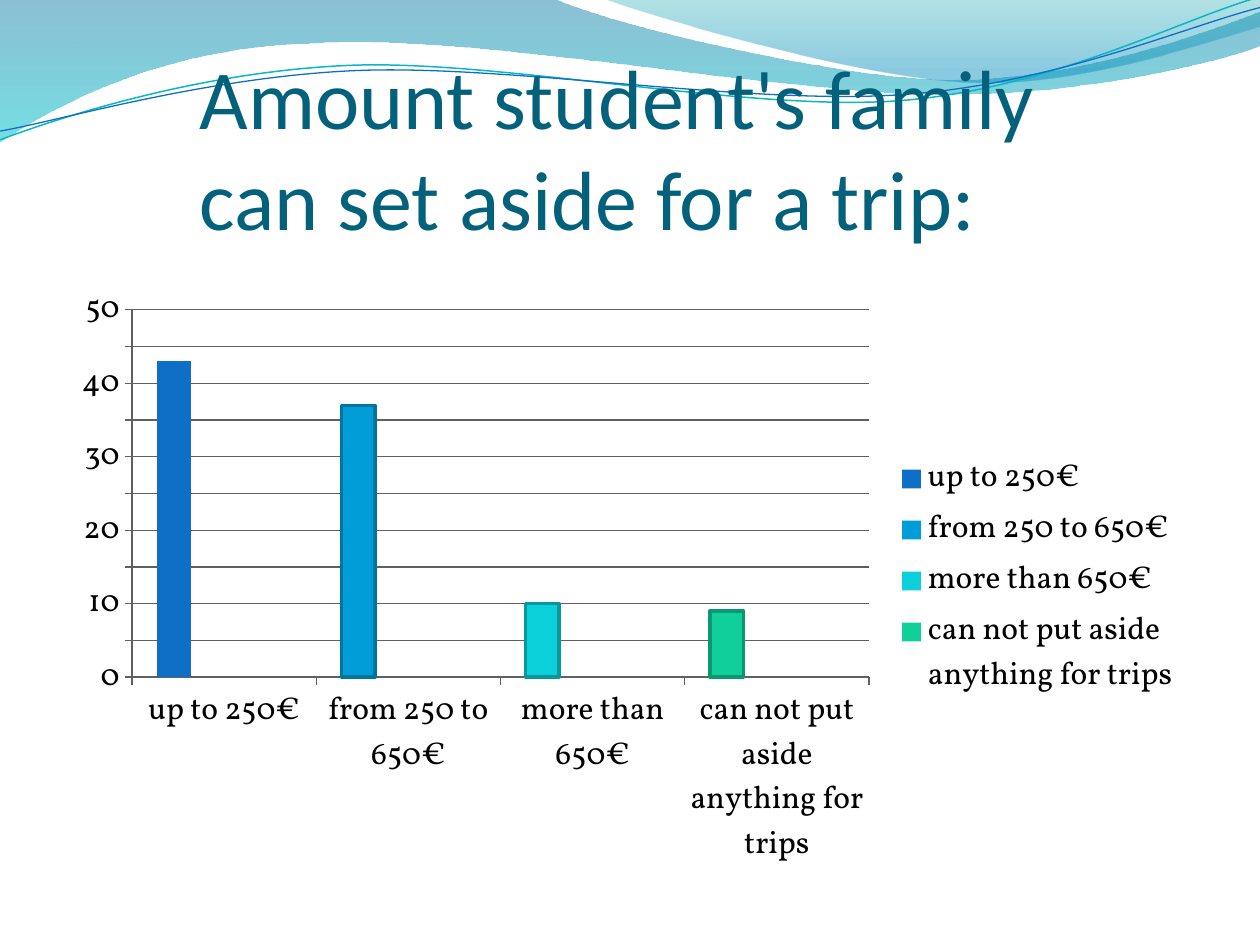
from lxml import etree
from pptx import Presentation
from pptx.chart.data import CategoryChartData
from pptx.dml.color import RGBColor
from pptx.enum.chart import XL_CHART_TYPE, XL_LEGEND_POSITION, XL_TICK_MARK
from pptx.oxml.ns import nsdecls, qn
from pptx.util import Pt

COLUMN = XL_CHART_TYPE.COLUMN_CLUSTERED
RIGHT = XL_LEGEND_POSITION.RIGHT
OUTSIDE = XL_TICK_MARK.OUTSIDE

BLACK = RGBColor(0x00, 0x00, 0x00)
GRAY = RGBColor(0x60, 0x60, 0x60)
TITLE = RGBColor(0x04, 0x61, 0x7B)
BLUE = RGBColor(0x0F, 0x6F, 0xC6)
SKY = RGBColor(0x00, 0x9D, 0xD9)
CYAN = RGBColor(0x0B, 0xD0, 0xD9)
GREEN = RGBColor(0x10, 0xCF, 0x9B)
EDGES = [None, RGBColor(0x00, 0x73, 0x9F), RGBColor(0x07, 0x98, 0x9F),
         RGBColor(0x0B, 0x98, 0x71)]
TEAL = RGBColor(0x0A, 0xB8, 0xBF)
DEEP = RGBColor(0x00, 0x74, 0xA1)
AQUA = RGBColor(0x00, 0xC6, 0xCF)
MINT = RGBColor(0x00, 0xA1, 0xA9)
OCEAN = RGBColor(0x00, 0x8B, 0xBF)

prs = Presentation()
prs.slide_width, prs.slide_height = Pt(720), Pt(540)
slide = prs.slides.add_slide(prs.slide_layouts[6])


def draw(start, parts, close):
    """Outline from lines (2 numbers) and Bezier curves (6 numbers)."""
    dots = [(Pt(x), Pt(y)) for part in parts
            for x, y in zip(part[::2], part[1::2])]
    pen = slide.shapes.build_freeform(Pt(start[0]), Pt(start[1]))
    pen.add_line_segments(dots, close=close)
    shape = pen.convert_to_shape()
    shape.shadow.inherit = False
    # Merge the three points of each curve into one Bezier step
    steps = iter(list(shape.element.iter(qn("a:lnTo"))))
    for part in parts:
        group = [next(steps) for _ in part[::2]]
        if len(group) == 3:
            bend = etree.Element(qn("a:cubicBezTo"))
            group[0].addprevious(bend)
            for step in group:
                bend.append(step[0])
                step.getparent().remove(step)
    return shape


# Header waves: start, parts, gradient stops (percent, colour, opacity)
waves = [
    ((0, 0),
     [(316.8, -0.7), (342.7, 12.2, 478.1, 45.4, 545.8, 45.4),
      (614.2, 45.4, 689.8, 18.7, 720, 6.5), (720.7, 25.9),
      (707.8, 31.7, 626.4, 54.7, 537.1, 54), (447.8, 54, 275, 20.2, 185, 24.5),
      (92.9, 25.9, 33.1, 59.8, -0.7, 81.4)],
     [(0, DEEP, 45), (100, AQUA, 55)]),
    ((344.9, -0.7),
     [(366.5, 7.9, 491, 44.6, 553.7, 46.8),
      (616.3, 49.7, 691.9, 23, 720, 15.1), (720, 0)],
     [(0, MINT, 30), (80, OCEAN, 45)]),
]
for start, parts, stops in waves:
    wave = draw(start, parts, True)
    wave.line.fill.background()
    marks = "".join(
        f'<a:gs pos="{pos * 1000}"><a:srgbClr val="{color}">'
        f'<a:alpha val="{alpha * 1000}"/></a:srgbClr></a:gs>'
        for pos, color, alpha in stops)
    grad = etree.fromstring(
        f'<a:gradFill {nsdecls("a")} rotWithShape="1"><a:gsLst>{marks}</a:gsLst>'
        '<a:lin ang="5400000" scaled="0"/></a:gradFill>')
    wave.element.spPr.find(qn("a:custGeom")).addnext(grad)

# Thin header curves
curves = [
    ((0, 79.9), [(34.6, 67, 113.8, 41, 199.4, 37.4),
                 (284.4, 33.8, 427, 64.1, 513.4, 57.6),
                 (599.8, 51.1, 675.4, 10.8, 718.6, -1.4)], TEAL, 0.85),
    ((0, 74.9), [(33.8, 69.1, 118.1, 43.9, 203.8, 40.3),
                 (290.2, 36.7, 429.8, 60.5, 516.2, 54),
                 (601.9, 48.2, 677.5, 15.1, 720, 4.3)], BLUE, 0.75),
]
for start, parts, color, width in curves:
    curve = draw(start, parts, False)
    curve.fill.background()
    curve.line.color.rgb = color
    curve.line.width = Pt(width)

# Column chart: the first series holds the values, the rest feed the legend
names = ["up to 250€", "from 250 to 650€", "more than 650€",
         "can not put aside anything for trips"]
colors = [BLUE, SKY, CYAN, GREEN]
data = CategoryChartData()
data.categories = names
for i, name in enumerate(names):
    data.add_series(name, [43, 37, 10, 9] if i == 0 else [None] * 4)
chart = slide.shapes.add_chart(COLUMN, Pt(33.8), Pt(157.4), Pt(648), Pt(345.6),
                               data).chart
chart.has_title = False
chart.font.name = "Vollkorn"
chart.font.size = Pt(18)
chart.font.color.rgb = BLACK
chart.has_legend = True
chart.legend.position = RIGHT
chart.legend.include_in_layout = False

plot = chart.plots[0]
plot.gap_width, plot.overlap, plot.vary_by_categories = 150, 0, False
for row, color in zip(plot.series, colors):
    row.format.fill.solid()
    row.format.fill.fore_color.rgb = color
    row.invert_if_negative = False
for i in range(1, 4):
    look = plot.series[0].points[i].format
    look.fill.solid()
    look.fill.fore_color.rgb = colors[i]
    look.line.color.rgb = EDGES[i]
    look.line.width = Pt(2)

# Axes
shared = {"major_tick_mark": OUTSIDE}
scale = {"minimum_scale": 0, "maximum_scale": 50, "major_unit": 5,
         "has_major_gridlines": True}
for axis, extra in ((chart.category_axis, {}), (chart.value_axis, scale)):
    for key, value in {**shared, **extra}.items():
        setattr(axis, key, value)
    axis.format.line.color.rgb = GRAY
grid = chart.value_axis.major_gridlines.format.line
grid.color.rgb = GRAY
grid.width = Pt(0.75)

# Title
frame = slide.shapes.add_textbox(Pt(107), Pt(22.3), Pt(507.6), Pt(123.8)).text_frame
frame.word_wrap = False
frame.text = "Amount student's family\ncan set aside for a trip:"
style = {"name": "Calibri", "size": Pt(48)}
for para in frame.paragraphs:
    for key, value in style.items():
        setattr(para.font, key, value)
    para.font.color.rgb = TITLE

prs.save("out.pptx")
